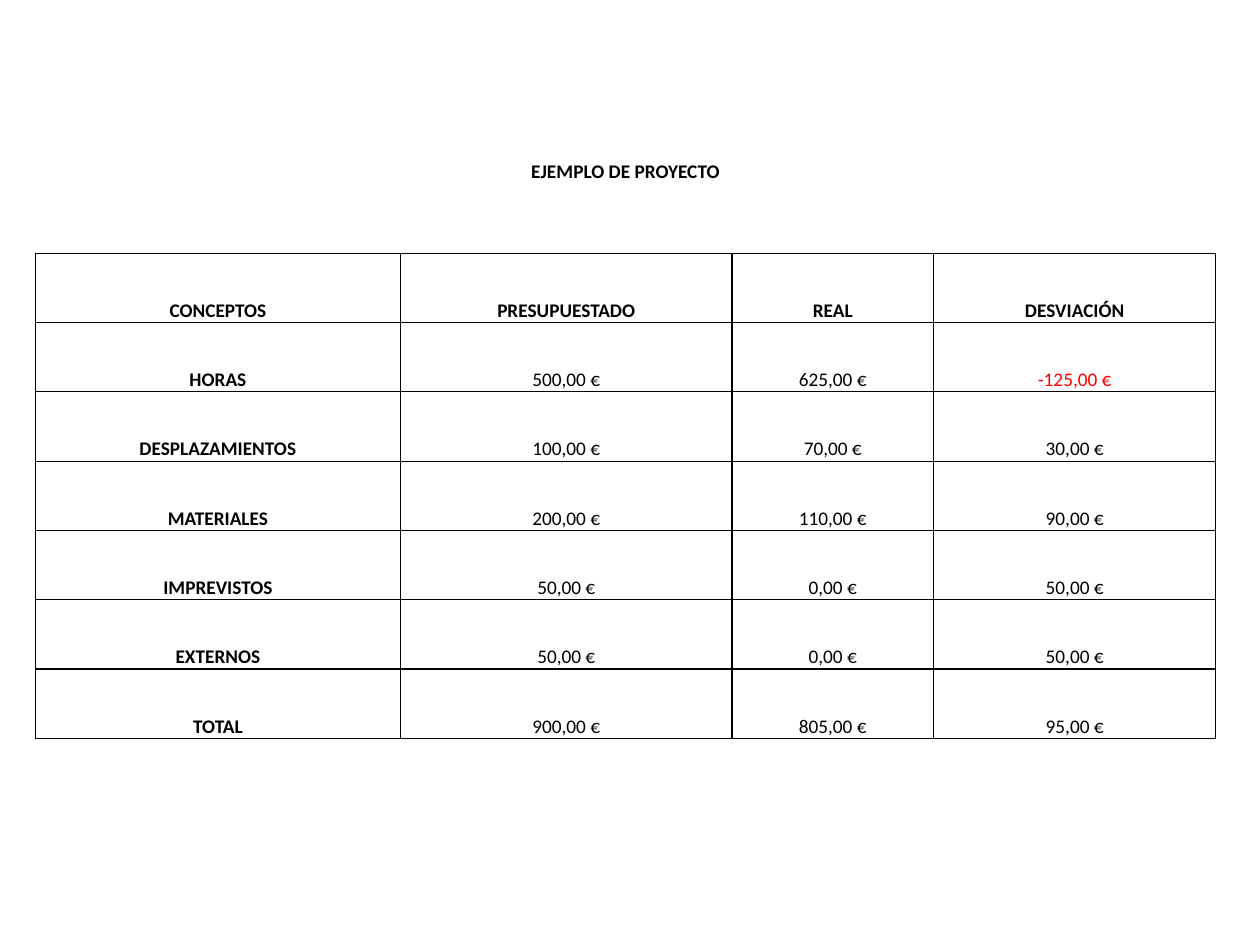
from lxml import etree
from pptx import Presentation
from pptx.dml.color import RGBColor
from pptx.enum.text import MSO_ANCHOR, PP_ALIGN
from pptx.oxml.ns import qn
from pptx.util import Inches, Pt

BOTTOM = MSO_ANCHOR.BOTTOM
CENTER = PP_ALIGN.CENTER
COLORS = {"ink": "000000", "negative": "FF0000"}
FONT = "Calibri"

COLUMN_WIDTHS = [2.9, 2.63, 1.6, 2.24]
ROW_HEIGHT = 0.55
ROW_COUNT = 12
TITLE_ROW = 1
HEADER_ROW = 3
BUDGET = [
    ["CONCEPTOS", "PRESUPUESTADO", "REAL", "DESVIACIÓN"],
    ["HORAS", "500,00 €", "625,00 €", "-125,00 €"],
    ["DESPLAZAMIENTOS", "100,00 €", "70,00 €", "30,00 €"],
    ["MATERIALES", "200,00 €", "110,00 €", "90,00 €"],
    ["IMPREVISTOS", "50,00 €", "0,00 €", "50,00 €"],
    ["EXTERNOS", "50,00 €", "0,00 €", "50,00 €"],
    ["TOTAL", "900,00 €", "805,00 €", "95,00 €"],
]
AFTER_TOTAL = HEADER_ROW + len(BUDGET)


def write(cell, text, size=11, bold=False, color="ink"):
    cell.vertical_anchor = BOTTOM
    cell.margin_left = cell.margin_right = cell.margin_top = Inches(0.01)
    cell.margin_bottom = 0
    paragraph = cell.text_frame.paragraphs[0]
    paragraph.alignment = CENTER
    run = paragraph.add_run()
    run.text = text
    run.font.name = FONT
    run.font.size = Pt(size)
    run.font.bold = bold
    run.font.color.rgb = RGBColor.from_string(COLORS[color])


def draw_borders(cell, ruled_sides):
    """Rule the given sides (letters of "LRTB") and hide the others."""
    properties = cell._tc.get_or_add_tcPr()
    for side in "LRTB":
        line = etree.SubElement(properties, qn(f"a:ln{side}"), w=str(Pt(0.75)))
        if side in ruled_sides:
            fill = etree.SubElement(line, qn("a:solidFill"))
            etree.SubElement(fill, qn("a:srgbClr"), val=COLORS["ink"])
        else:
            etree.SubElement(line, qn("a:noFill"))


prs = Presentation()
prs.slide_width = Inches(10)
prs.slide_height = Inches(7.5)
slide = prs.slides.add_slide(prs.slide_layouts[6])

table = slide.shapes.add_table(
    ROW_COUNT, len(COLUMN_WIDTHS), Inches(0.28), Inches(0.36),
    Inches(sum(COLUMN_WIDTHS)), Inches(ROW_HEIGHT * ROW_COUNT),
).table
table.first_row = False
table.horz_banding = False
for column, width in zip(table.columns, COLUMN_WIDTHS):
    column.width = Inches(width)

# Only the budget rows are ruled; the rows around them share their outer lines.
ruled_sides = {HEADER_ROW - 1: "B", AFTER_TOTAL: "T"}
ruled_sides.update({row: "LRTB" for row in range(HEADER_ROW, AFTER_TOTAL)})
for row_index, row in enumerate(table.rows):
    row.height = Inches(ROW_HEIGHT)
    for cell in row.cells:
        draw_borders(cell, ruled_sides.get(row_index, ""))
        cell.fill.background()

title = table.cell(TITLE_ROW, 0)
title.merge(table.cell(TITLE_ROW, len(COLUMN_WIDTHS) - 1))
write(title, "EJEMPLO DE PROYECTO", bold=True)

for row_index, entries in enumerate(BUDGET):
    for column_index, entry in enumerate(entries):
        write(
            table.cell(HEADER_ROW + row_index, column_index), entry,
            bold=row_index == 0 or column_index == 0,
            color="negative" if entry.startswith("-") else "ink",
        )

prs.save("out.pptx")
